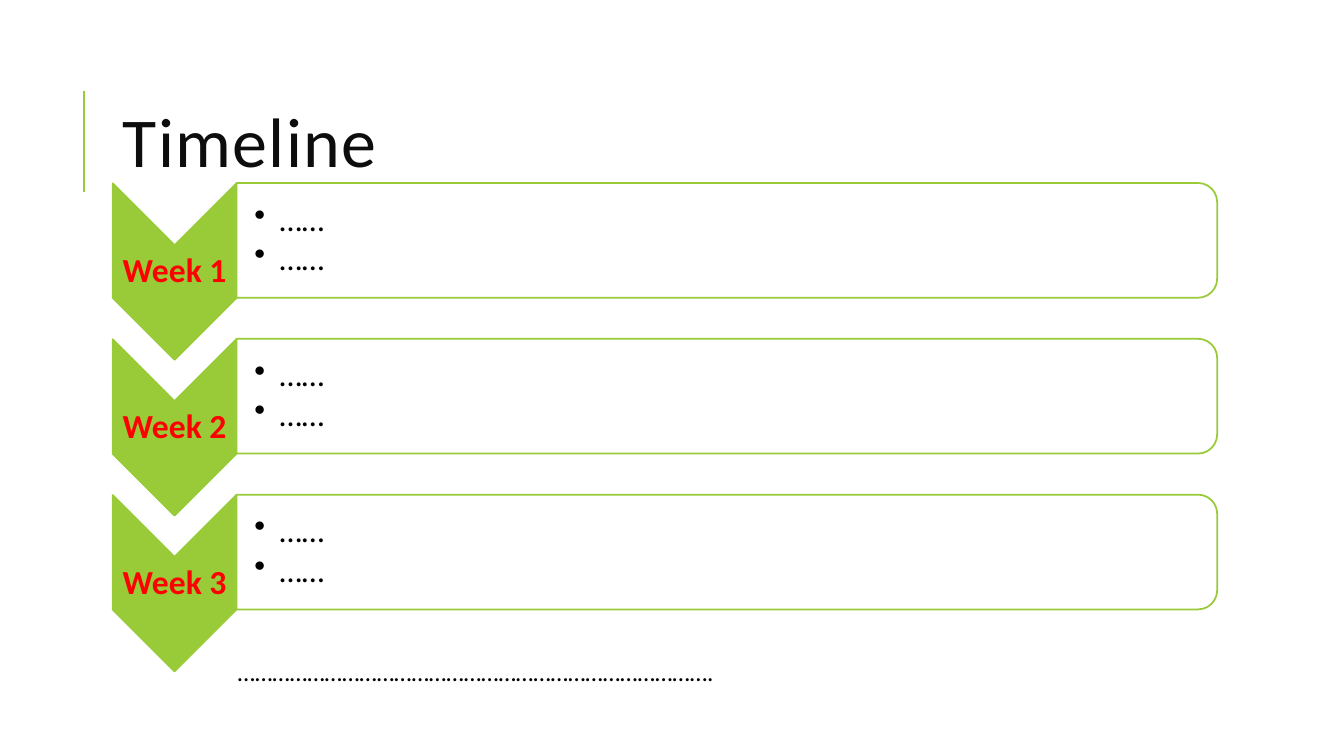
from dataclasses import dataclass

from lxml import etree
from pptx import Presentation
from pptx import util as u
from pptx.dml.color import RGBColor
from pptx.enum import shapes, text
from pptx.oxml.ns import qn

FONT = "Calibri"
GREEN, WHITE, RED, BLACK, TITLE_COLOR = "99CB38", "FFFFFF", "FF0000", "000000", "0D0D0D"
WEEK_PITCH = 111.3


@dataclass
class Box:
    """Area as seen on the slide, in points."""
    left: float
    top: float
    width: float
    height: float

    def down(self, distance: float) -> "Box":
        return Box(self.left, self.top + distance, self.width, self.height)

    def lengths(self) -> list:
        return [u.Pt(v) for v in (self.left, self.top, self.width, self.height)]


@dataclass
class Week:
    label: str
    tasks: list[str]


CHEVRON = Box(80.5, 131, 88.4, 126)
LABEL = Box(80.5, 175, 88.4, 38)
PANEL = Box(168.9, 130.7, 700.5, 82)
TASKS = Box(168.9, 134.7, 696.5, 74)
WEEKS = [Week(f"Week {number}", ["……", "……"]) for number in (1, 2, 3)]


def color(value: str) -> RGBColor:
    return RGBColor.from_string(value)


def add_turned_shape(slide, kind, box: Box, fill: str):
    """Draw a shape turned by 90 degrees so that it covers the box."""
    shift = (box.width - box.height) / 2
    unturned = Box(box.left + shift, box.top - shift, box.height, box.width)
    shape = slide.shapes.add_shape(kind, *unturned.lengths())
    shape.rotation = 90
    shape.shadow.inherit = False
    shape.fill.solid()
    shape.fill.fore_color.rgb = color(fill)
    shape.line.color.rgb = color(GREEN)
    shape.line.width = u.Pt(1.25)
    return shape


def add_text(slide, box: Box, lines: list[str], size: float, font_color: str,
             margins=(7.2, 3.6, 7.2, 3.6), line_spacing=1.0, space_after=0.0,
             anchor=text.MSO_ANCHOR.MIDDLE):
    frame = slide.shapes.add_textbox(*box.lengths()).text_frame
    frame.word_wrap = True
    frame.vertical_anchor = anchor
    (frame.margin_left, frame.margin_top,
     frame.margin_right, frame.margin_bottom) = map(u.Pt, margins)
    frame.text = "\n".join(lines)
    for paragraph in frame.paragraphs:
        paragraph.line_spacing = line_spacing
        paragraph.space_after = u.Pt(space_after)
        paragraph.font.name = FONT
        paragraph.font.size = u.Pt(size)
        paragraph.font.color.rgb = color(font_color)
    return frame


def add_bullet(paragraph) -> None:
    properties = paragraph._p.get_or_add_pPr()
    properties.set("marL", str(u.Pt(18)))
    properties.set("indent", str(u.Pt(-18)))
    bullet = etree.Element(qn("a:buChar"), char="•")
    properties.find(qn("a:defRPr")).addprevious(bullet)


def add_week(slide, week: Week, distance: float) -> None:
    add_turned_shape(slide, shapes.MSO_SHAPE.CHEVRON, CHEVRON.down(distance), GREEN)
    label = add_text(slide, LABEL.down(distance), [week.label], 24, RED,
                     (1.2, 1.2, 1.2, 1.2), 0.9, 8.4).paragraphs[0]
    label.alignment = text.PP_ALIGN.CENTER
    label.font.bold = True

    panel = add_turned_shape(slide, shapes.MSO_SHAPE.ROUND_2_SAME_RECTANGLE,
                             PANEL.down(distance), WHITE)
    fill_color = panel._element.spPr.find(qn("a:solidFill"))[0]
    etree.SubElement(fill_color, qn("a:alpha"), val="90000")
    tasks = add_text(slide, TASKS.down(distance), week.tasks, 23, BLACK,
                     (12.9, 1.2, 1.2, 1.2), 0.9, 3.45)
    for paragraph in tasks.paragraphs:
        add_bullet(paragraph)


def main() -> None:
    presentation = Presentation()
    presentation.slide_width, presentation.slide_height = u.Pt(960), u.Pt(540)
    slide = presentation.slides.add_slide(presentation.slide_layouts[6])

    # Title and its accent line
    accent = slide.shapes.add_connector(shapes.MSO_CONNECTOR.STRAIGHT,
                                        u.Pt(60), u.Pt(137), u.Pt(60), u.Pt(65))
    accent.line.color.rgb = color(GREEN)
    accent.line.width = u.Pt(1.5)
    etree.SubElement(accent._element.spPr, qn("a:effectLst"))
    title = add_text(slide, Box(80.5, 46, 765.5, 118), ["Timeline"], 50, TITLE_COLOR,
                     line_spacing=0.8)
    title.paragraphs[0].runs[0]._r.get_or_add_rPr().set("spc", "100")

    # Weeks
    for index, week in enumerate(WEEKS):
        add_week(slide, week, index * WEEK_PITCH)

    # Continuation dots
    dots = add_text(slide, Box(162.7, 465, 511, 29),
                    ["………………………………………………………………………."], 18, BLACK,
                    anchor=text.MSO_ANCHOR.TOP)
    dots.word_wrap = False
    dots.auto_size = text.MSO_AUTO_SIZE.SHAPE_TO_FIT_TEXT

    presentation.save("out.pptx")


if __name__ == "__main__":
    main()
